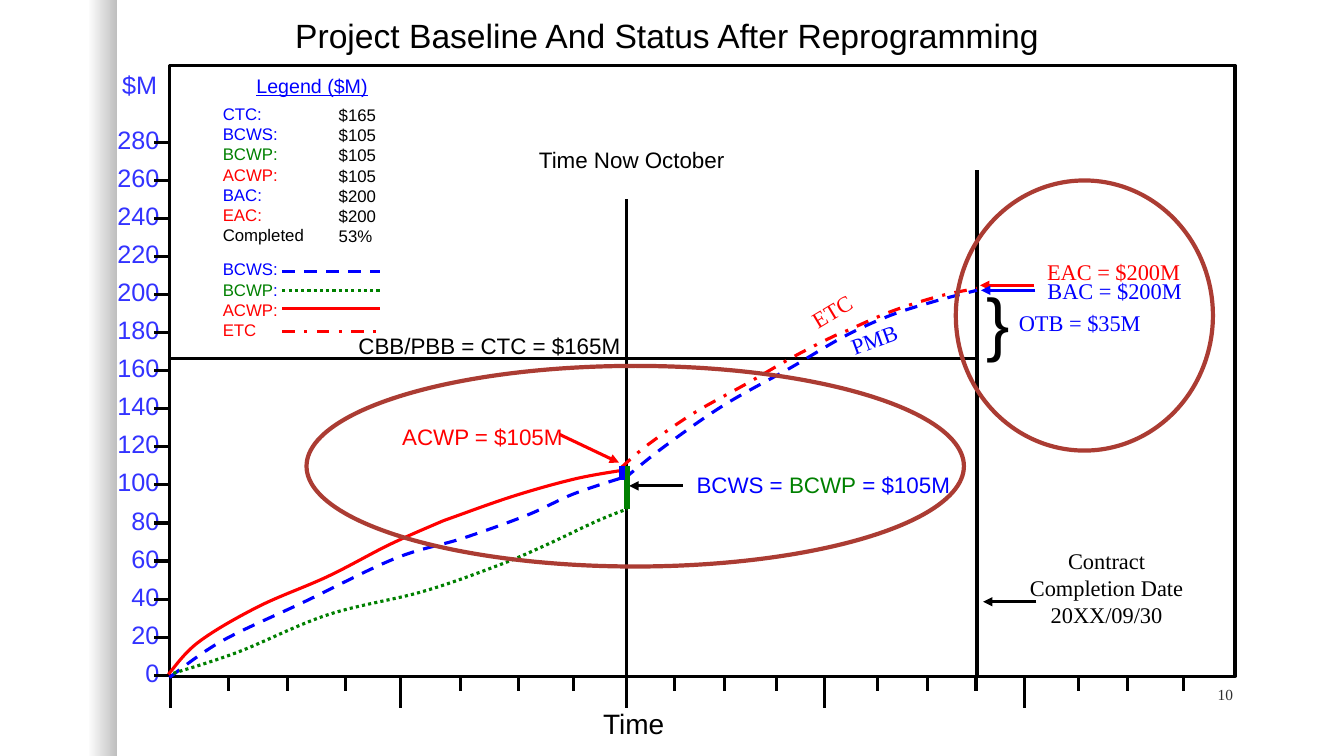
from dataclasses import dataclass

from lxml.etree import SubElement
from pptx import Presentation
from pptx.dml.color import RGBColor
from pptx.enum.dml import MSO_LINE_DASH_STYLE as Dash
from pptx.enum.shapes import MSO_CONNECTOR, MSO_SHAPE
from pptx.enum.text import MSO_ANCHOR, PP_ALIGN as Align
from pptx.oxml.ns import qn
from pptx.util import Inches, Pt


@dataclass(frozen=True)
class Theme:
    black: str = "000000"
    blue: str = "0000FF"
    green: str = "008000"
    red: str = "FF0000"
    axis: str = "3333FF"
    ring: str = "AB3C33"
    page: str = "303030"
    margin: tuple = ("FFFFFF", "BFBFBF")
    sans: str = "Arial"
    serif: str = "Times New Roman"
    title: int = 24
    time: int = 20
    scale: int = 18
    label: int = 16
    heading: int = 14
    legend: int = 12
    number: int = 11
    brace: int = 50
    line: float = 2.25
    ring_line: float = 3
    bar_line: float = 4.5


THEME = Theme()

# Content: all places are columns and rows of a one-inch grid
TITLE = "Project Baseline And Status After Reprogramming"
FRAME = (1.68, 0.65, 10.57, 6.06)
LEGEND = [
    ("CTC:", THEME.blue, "$165"),
    ("BCWS:", THEME.blue, "$105"),
    ("BCWP:", THEME.green, "$105"),
    ("ACWP:", THEME.red, "$105"),
    ("BAC:", THEME.blue, "$200"),
    ("EAC:", THEME.red, "$200"),
    ("Completed", THEME.black, "53%"),
]
# Key name runs, line row, line colour, dash
KEYS = [
    ([("BCWS:", THEME.blue)], 2.69, THEME.blue, Dash.DASH),
    ([("BCWP", THEME.green), (":", THEME.blue)], 2.88, THEME.green, Dash.ROUND_DOT),
    ([("ACWP:", THEME.red)], 3.06, THEME.red, None),
    ([("ETC", THEME.red)], 3.29, THEME.red, Dash.DASH_DOT),
]
# Knots of each smooth curve
CURVES = [
    (THEME.blue, Dash.DASH, [(1.68, 6.72), (2.2, 6.36), (3.02, 5.97), (3.92, 5.54),
                             (4.59, 5.34), (5.23, 5.11), (5.69, 4.9), (6.2, 4.73)]),
    (THEME.red, None, [(1.67, 6.69), (1.97, 6.37), (2.56, 6.02), (3.25, 5.72), (3.85, 5.41),
                       (4.32, 5.2), (4.5, 5.13), (5.1, 4.92), (5.71, 4.75), (6.21, 4.66)]),
    (THEME.red, Dash.DASH_DOT, [(6.16, 4.64), (6.43, 4.41), (6.88, 4.1), (7.4, 3.81),
                                (7.87, 3.54), (8.24, 3.35), (8.38, 3.29), (8.84, 3.09),
                                (9.31, 2.94), (9.69, 2.86)]),
    (THEME.blue, Dash.DASH, [(6.19, 4.75), (6.59, 4.43), (7.18, 4.02), (7.84, 3.65),
                             (8.37, 3.34), (8.83, 3.13), (9.27, 2.99), (9.69, 2.88)]),
    (THEME.green, Dash.ROUND_DOT, [(1.72, 6.68), (2.36, 6.47), (3.25, 6.1), (4.19, 5.87),
                                   (4.94, 5.61), (5.41, 5.41), (5.92, 5.17), (6.22, 5.05)]),
]
TIME_TICKS = [1.69, 2.27, 2.85, 3.43, 3.97, 4.57, 5.14, 5.69, 6.21, 6.69,
              7.19, 7.7, 8.18, 8.7, 9.2, 9.68, 10.16, 10.7, 11.18, 11.74]
GUIDES = [((9.69, 6.71), (9.69, 1.69)), ((6.21, 6.71), (6.21, 1.97)), ((9.67, 3.56), (1.68, 3.56))]
STATUS_BARS = [((6.22, 4.62), (6.22, 5.05), THEME.green), ((6.17, 4.62), (6.17, 4.76), THEME.blue)]
ARROWS = [
    ((6.77, 4.82), (6.24, 4.82), THEME.black),
    ((10.28, 5.97), (9.75, 5.97), THEME.black),
    ((10.26, 2.83), (9.72, 2.83), THEME.red),
    ((10.27, 2.88), (9.73, 2.88), THEME.blue),
    ((5.55, 4.31), (6.14, 4.59), THEME.red),
]
RINGS = [(3.04, 3.63, 6.52, 1.99), (9.48, 1.79, 2.55, 2.68)]
SERIF_BLUE = dict(font=THEME.serif, color=THEME.blue)
LABELS = [
    (["Time"], (5.98, 7.01, 0.61, 0.34), dict(size=THEME.time)),
    (["$M"], (1.21, 0.69, 0.35, 0.3), dict(size=THEME.scale, color=THEME.axis)),
    (["Legend ($M)"], (2.54, 0.73, 1.11, 0.24),
     dict(size=THEME.heading, color=THEME.blue, underline=True)),
    (["Time Now October"], (5.27, 1.49, 1.99, 0.24), dict(spacing=0.85)),
    (["CBB/PBB = CTC = $165M"], (3.54, 3.3, 2.63, 0.27), {}),
    (["ACWP = $105M"], (3.98, 4.2, 1.61, 0.27), dict(color=THEME.red)),
    ([[("BCWS = ", THEME.blue), ("BCWP", THEME.green), (" = $105M", THEME.blue)]],
     (6.89, 4.67, 2.55, 0.27), {}),
    (["EAC = $200M"], (10.36, 2.56, 1.37, 0.27), dict(font=THEME.serif, color=THEME.red)),
    (["BAC = $200M"], (10.37, 2.75, 1.37, 0.27), SERIF_BLUE),
    (["OTB = $35M"], (10.08, 3.07, 1.26, 0.27), SERIF_BLUE),
    (["ETC"], (8.02, 2.95, 0.46, 0.27), dict(font=THEME.serif, color=THEME.red, rotation=329)),
    (["PMB"], (8.24, 3.23, 0.85, 0.24), dict(SERIF_BLUE, rotation=340)),
    (["Contract Completion Date", "20XX/09/30"], (10.1, 5.43, 1.75, 0.74),
     dict(font=THEME.serif, wrap=True)),
    (["}"], (9.75, 2.76, 0.31, 0.84), dict(size=THEME.brace)),
    (["10"], (9.55, 6.8, 2.68, 0.25),
     dict(font=THEME.serif, size=THEME.number, color=THEME.page, align=Align.RIGHT)),
]


def rgb(color):
    return RGBColor.from_string(color)


def add_text(slide, paragraphs, box, *, size=THEME.label, font=THEME.sans, color=THEME.black,
             align=Align.CENTER, wrap=False, spacing=None, underline=None, rotation=0, shape=None):
    """Write paragraphs, each a string or a list of (text, colour) runs."""
    left, top, width, height = map(Inches, box)
    shape = shape or slide.shapes.add_textbox(left, top, width, height)
    shape.left, shape.top, shape.width, shape.height = left, top, width, height
    shape.rotation = rotation
    frame = shape.text_frame
    frame.word_wrap = wrap
    frame.vertical_anchor = MSO_ANCHOR.TOP
    frame.margin_left = frame.margin_right = frame.margin_top = frame.margin_bottom = 0
    for index, content in enumerate(paragraphs):
        paragraph = frame.add_paragraph() if index else frame.paragraphs[0]
        paragraph.alignment = align
        paragraph.line_spacing = spacing
        for text, run_color in [(content, color)] if isinstance(content, str) else content:
            run = paragraph.add_run()
            run.text = text
            run.font.name, run.font.size = font, Pt(size)
            run.font.underline = underline
            run.font.color.rgb = rgb(run_color)


def style_line(shape, color, width=THEME.line, dash=None):
    shape.line.color.rgb = rgb(color)
    shape.line.width = Pt(width)
    if dash:
        shape.line.dash_style = dash


def add_line(slide, start, end, color=THEME.black, width=THEME.line, dash=None, arrow=False):
    line = slide.shapes.add_connector(MSO_CONNECTOR.STRAIGHT, *map(Inches, (*start, *end)))
    style_line(line, color, width, dash)
    if arrow:
        SubElement(line.line._get_or_add_ln(), qn("a:tailEnd"), type="triangle")
    SubElement(line._element.spPr, qn("a:effectLst"))


def add_outline(slide, kind, box, color, width):
    shape = slide.shapes.add_shape(kind, *map(Inches, box))
    shape.shadow.inherit = False
    shape.fill.background()
    style_line(shape, color, width)


def add_curve(slide, color, dash, knots):
    """Draw a Catmull-Rom spline through the knots as Bézier segments."""
    first, *rest = [(Inches(x), Inches(y)) for x, y in knots]
    builder = slide.shapes.build_freeform(*first)
    builder.add_line_segments(rest, close=False)
    curve = builder.convert_to_shape()
    curve.shadow.inherit = False
    curve.fill.background()
    style_line(curve, color, dash=dash)

    points = [(int(pt.get("x")), int(pt.get("y"))) for pt in curve._element.iter(qn("a:pt"))]
    padded = [points[0], *points, points[-1]]
    segments = list(curve._element.iter(qn("a:lnTo")))
    for segment, a, b, c, d in zip(segments, padded, padded[1:], padded[2:], padded[3:]):
        segment.tag = qn("a:cubicBezTo")
        leave = [q + (r - p) / 6 for p, q, r in zip(a, b, c)]
        arrive = [q - (r - p) / 6 for p, q, r in zip(b, c, d)]
        for index, (x, y) in enumerate((leave, arrive)):
            control = SubElement(segment, qn("a:pt"), x=str(round(x)), y=str(round(y)))
            segment.insert(index, control)


def main():
    presentation = Presentation()
    presentation.slide_width, presentation.slide_height = Inches(13.33), Inches(7.5)
    slide = presentation.slides.add_slide(presentation.slide_layouts[5])

    # Shaded left margin and title
    margin = slide.shapes.add_shape(MSO_SHAPE.RECTANGLE, 0, 0, Inches(1.16), Inches(7.5))
    margin.shadow.inherit = False
    margin.line.fill.background()
    margin.fill.gradient()
    margin.fill.gradient_angle = 0
    for stop, position, color in zip(margin.fill.gradient_stops, (0.75, 1), THEME.margin):
        stop.position, stop.color.rgb = position, rgb(color)
    add_text(slide, [TITLE], (2.87, 0.21, 7.49, 0.34), size=THEME.title, spacing=0.85,
             shape=slide.shapes.title)

    # Frame, guides and axes
    add_outline(slide, MSO_SHAPE.RECTANGLE, FRAME, THEME.black, THEME.line)
    for start, end in GUIDES:
        add_line(slide, start, end)
    zero, top = 6.7, 1.41
    for value in range(0, 281, 20):
        row = zero - (zero - top) * value / 280
        add_text(slide, [str(value)], (1.16, row - 0.18, 0.42, 0.3), size=THEME.scale,
                 color=THEME.axis, align=Align.RIGHT)
        add_line(slide, (1.53, row), (FRAME[0], row))
    for index, column in enumerate(TIME_TICKS):
        add_line(slide, (column, 6.71), (column, 6.86 if index % 4 else 7.02))

    # Legend
    legend = dict(size=THEME.legend, align=Align.LEFT)
    add_text(slide, [[(name, color)] for name, color, _ in LEGEND], (2.21, 1.03, 0.9, 1.41), **legend)
    add_text(slide, [value for *_, value in LEGEND], (3.36, 1.04, 0.5, 1.41), **legend)
    add_text(slide, [runs for runs, *_ in KEYS], (2.21, 2.57, 0.58, 0.81), **legend)
    for _, row, color, dash in KEYS:
        add_line(slide, (2.8, row), (3.77, row), color, dash=dash)

    # Curves, labels and marks
    for color, dash, knots in CURVES:
        add_curve(slide, color, dash, knots)
    for paragraphs, box, style in LABELS:
        add_text(slide, paragraphs, box, **style)
    for start, end, color in ARROWS:
        add_line(slide, start, end, color, arrow=True)
    for start, end, color in STATUS_BARS:
        add_line(slide, start, end, color, THEME.bar_line)
    for box in RINGS:
        add_outline(slide, MSO_SHAPE.OVAL, box, THEME.ring, THEME.ring_line)

    presentation.save("out.pptx")


if __name__ == "__main__":
    main()
